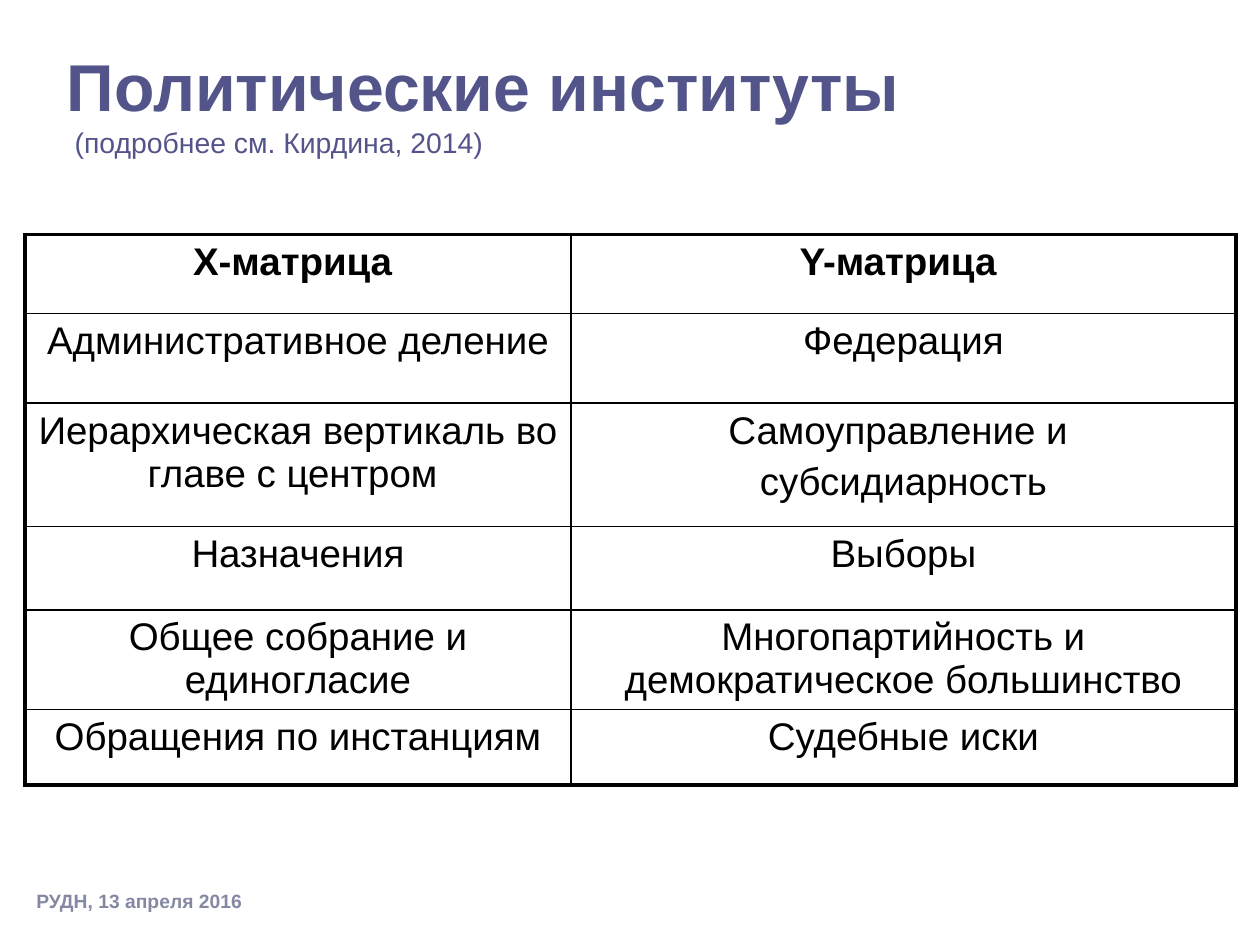
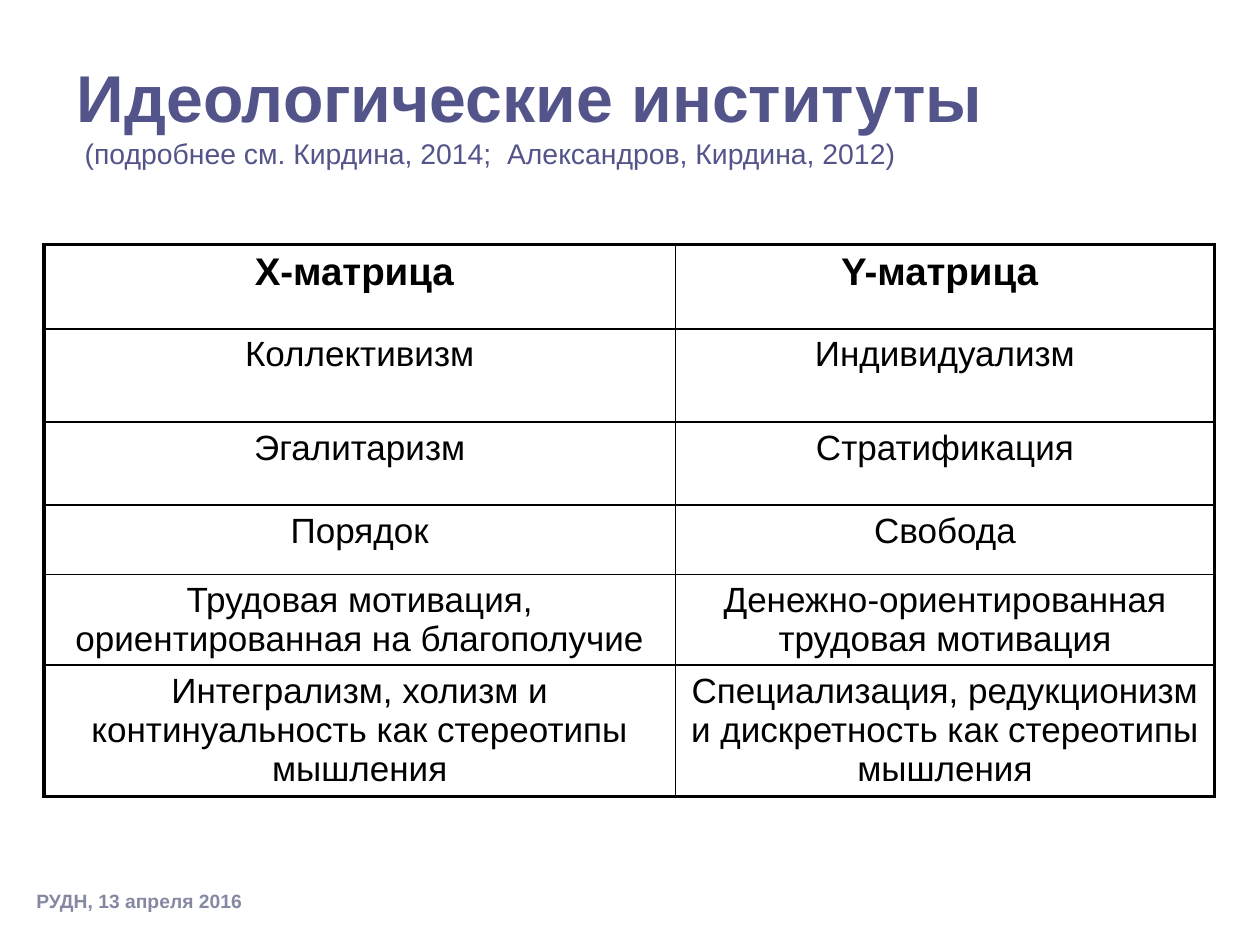
from dataclasses import dataclass

from copy import deepcopy
from lxml.etree import SubElement
from pptx import Presentation
from pptx.dml.color import RGBColor
from pptx.enum.text import MSO_ANCHOR, MSO_AUTO_SIZE, PP_ALIGN
from pptx.oxml.ns import qn
from pptx.util import Inches, Pt


@dataclass(frozen=True)
class Theme:
    font: str = "Arial"
    title_color: str = "53548A"
    text_color: str = "000000"
    footer_color: str = "8588A2"
    title_size: float = 37.8
    source_size: float = 16.2
    header_size: float = 22
    footer_size: float = 11
    outer_line: float = 2.25
    inner_line: float = 1


THEME = Theme()
TITLE_ONLY = 5
FOOTER = "РУДН, 13 апреля 2016"
HEADERS = ("Х-матрица ", "Y-матрица ")

# The slide is a grid of 100 columns and 75 rows of equal square units
COLUMNS, ROWS = 100, 75
UNIT = Inches(10) // COLUMNS

POLITICAL = {
    "title": "Политические институты",
    "source": " (подробнее см. Кирдина, 2014)",
    "title_box": (4.3, 2.9, 91.7, 10.2),
    "table_corner": (2, 18.6),
    "column_widths": (43.3, 52.8),
    "row_heights": (6.3, 7.1, 9.8, 6.6, 7.9, 6),
    "body_size": 22,
    "pairs": [
        ("Административное деление", "Федерация"),
        ("Иерархическая вертикаль во главе с центром ",
         "Самоуправление и \nсубсидиарность"),
        ("Назначения", "Выборы"),
        ("Общее собрание и единогласие",
         "Многопартийность и демократическое большинство"),
        ("Обращения по инстанциям", "Судебные иски"),
    ],
}

IDEOLOGICAL = {
    "title": "Идеологические институты",
    "source": " (подробнее см. Кирдина, 2014;  Александров, Кирдина, 2012)",
    "title_box": (5.1, 4.4, 91.7, 9.6),
    "table_corner": (3.5, 19.4),
    "column_widths": (50.1, 42.8),
    "row_heights": (6.7, 7.4, 6.6, 5.5, 7.2, 10.4),
    "body_size": 20,
    "pairs": [
        ("Коллективизм", "Индивидуализм"),
        ("Эгалитаризм", "Стратификация"),
        ("Порядок", "Свобода"),
        ("Трудовая мотивация, ориентированная на благополучие",
         "Денежно-ориентированная трудовая мотивация"),
        ("Интегрализм, холизм и континуальность как стереотипы мышления",
         "Специализация, редукционизм и дискретность как стереотипы мышления"),
    ],
}


def units(*lengths):
    return [round(length * UNIT) for length in lengths]


def set_values(target, values):
    for name, value in values.items():
        setattr(target, name, value)


def add_run(paragraph, text, size, color, bold=False):
    run = paragraph.add_run()
    run.text = text
    set_values(run.font, {"name": THEME.font, "size": Pt(size), "bold": bold})
    run.font.color.rgb = RGBColor.from_string(color)
    return run


def fill_title(slide, title, source, box):
    shape = slide.shapes.title
    set_values(shape, dict(zip(("left", "top", "width", "height"), units(*box))))
    set_values(shape.text_frame, {
        "vertical_anchor": MSO_ANCHOR.BOTTOM,
        "auto_size": MSO_AUTO_SIZE.NONE,
        "word_wrap": True,
    })
    paragraph = shape.text_frame.paragraphs[0]
    paragraph.alignment = PP_ALIGN.LEFT
    heading = add_run(paragraph, title, THEME.title_size, THEME.title_color, True)
    paragraph.add_line_break()
    # The break takes the heading's size so that the first line keeps its height
    paragraph._p.find(qn("a:br")).append(deepcopy(heading.font._element))
    add_run(paragraph, source, THEME.source_size, THEME.title_color)


def add_footer(slide):
    text_frame = slide.shapes.add_textbox(*units(1.9, 69.5, 65.7, 4)).text_frame
    set_values(text_frame, {"vertical_anchor": MSO_ANCHOR.MIDDLE, "word_wrap": True})
    add_run(text_frame.paragraphs[0], FOOTER, THEME.footer_size,
            THEME.footer_color, True)


def draw_borders(cell, outer_sides):
    properties = cell._tc.get_or_add_tcPr()
    for side in "LRTB":
        width = THEME.outer_line if side in outer_sides else THEME.inner_line
        line = SubElement(properties, qn(f"a:ln{side}"), w=str(Pt(width)))
        fill = SubElement(line, qn("a:solidFill"))
        SubElement(fill, qn("a:srgbClr"), val=THEME.text_color)


def fill_cell(cell, text, size, bold):
    cell.vertical_anchor = MSO_ANCHOR.TOP
    cell.fill.background()
    for index, line in enumerate(text.split("\n")):
        text_frame = cell.text_frame
        paragraph = text_frame.add_paragraph() if index else text_frame.paragraphs[0]
        set_values(paragraph, {"alignment": PP_ALIGN.CENTER,
                               "space_before": Pt(0.2 * size)})
        add_run(paragraph, line, size, THEME.text_color, bold)


def add_comparison(slide, corner, column_widths, row_heights, body_size, pairs):
    rows = [HEADERS, *pairs]
    size = units(sum(column_widths), sum(row_heights))
    table = slide.shapes.add_table(len(rows), len(HEADERS),
                                   *units(*corner), *size).table
    set_values(table, {"first_row": False, "horz_banding": False})
    for column, width in zip(table.columns, units(*column_widths)):
        column.width = width
    for row, height in zip(table.rows, units(*row_heights)):
        row.height = height

    for row_index, texts in enumerate(rows):
        is_header = row_index == 0
        vertical = "T" if is_header else "B" if row_index == len(rows) - 1 else ""
        for column_index, text in enumerate(texts):
            cell = table.cell(row_index, column_index)
            draw_borders(cell, "LR"[column_index] + vertical)
            fill_cell(cell, text, THEME.header_size if is_header else body_size,
                      is_header)


def add_institutions_slide(presentation, content):
    slide = presentation.slides.add_slide(presentation.slide_layouts[TITLE_ONLY])
    fill_title(slide, content["title"], content["source"], content["title_box"])
    add_comparison(slide, content["table_corner"], content["column_widths"],
                   content["row_heights"], content["body_size"], content["pairs"])
    add_footer(slide)


def main():
    presentation = Presentation()
    set_values(presentation, {"slide_width": COLUMNS * UNIT,
                              "slide_height": ROWS * UNIT})
    for content in (POLITICAL, IDEOLOGICAL):
        add_institutions_slide(presentation, content)
    presentation.save("out.pptx")


if __name__ == "__main__":
    main()
